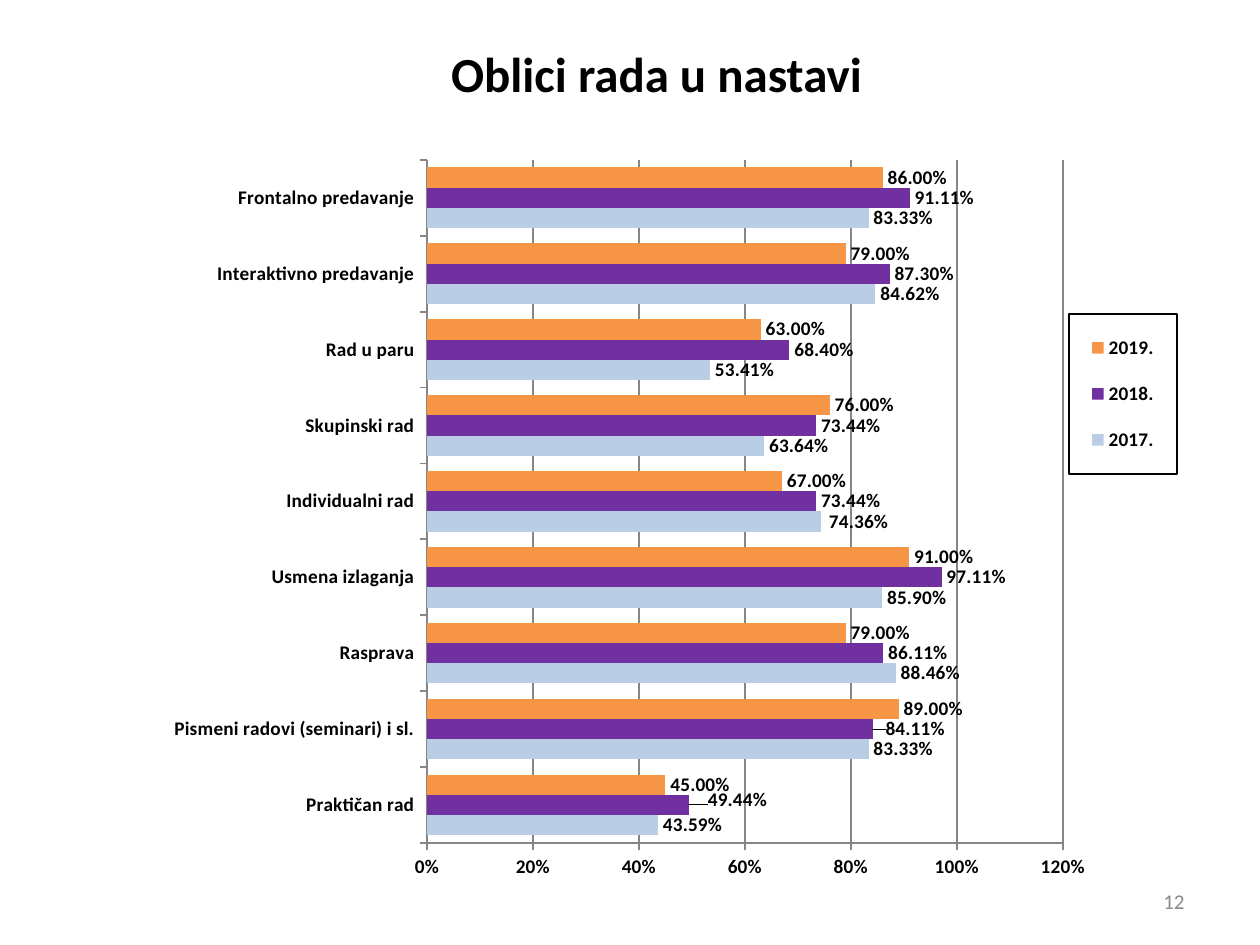
from lxml import etree
from pptx import Presentation
from pptx.chart.data import CategoryChartData
from pptx.dml.color import RGBColor
from pptx.enum.chart import XL_CHART_TYPE, XL_LABEL_POSITION, XL_LEGEND_POSITION, XL_TICK_MARK
from pptx.enum.text import MSO_ANCHOR, PP_ALIGN
from pptx.oxml.ns import qn
from pptx.util import Pt

BAR = XL_CHART_TYPE.BAR_CLUSTERED
OUTSIDE_END = XL_LABEL_POSITION.OUTSIDE_END
RIGHT_LEGEND = XL_LEGEND_POSITION.RIGHT
TICK_OUT = XL_TICK_MARK.OUTSIDE
MIDDLE = MSO_ANCHOR.MIDDLE
CENTER, RIGHT = PP_ALIGN.CENTER, PP_ALIGN.RIGHT

BLACK = RGBColor(0x00, 0x00, 0x00)
WHITE = RGBColor(0xFF, 0xFF, 0xFF)
GRAY = RGBColor(0x89, 0x89, 0x89)
AXIS_GRAY = RGBColor(0x86, 0x86, 0x86)
LIGHT_BLUE = RGBColor(0xB9, 0xCD, 0xE5)
PURPLE = RGBColor(0x70, 0x30, 0xA0)
ORANGE = RGBColor(0xF7, 0x96, 0x46)

FONT = "Calibri"
PERCENT = "0.00%"
WIDTH, HEIGHT = 1260, 945
EMU_PER_PX = 914400 / 126
CHART_LEFT, CHART_TOP, CHART_WIDTH, CHART_HEIGHT = 154, 145, 1037, 750

CATEGORIES = [
    "Praktičan rad", "Pismeni radovi (seminari) i sl.", "Rasprava",
    "Usmena izlaganja", "Individualni rad", "Skupinski rad",
    "Rad u paru", "Interaktivno predavanje", "Frontalno predavanje",
]
SERIES = [
    ("2017.", LIGHT_BLUE,
     [0.4359, 0.8333, 0.8846, 0.859, 0.7436, 0.6364, 0.5341, 0.8462, 0.8333],
     {4: (3, 0)}),
    ("2018.", PURPLE,
     [0.4944, 0.8411, 0.8611, 0.9711, 0.7344, 0.7344, 0.684, 0.873, 0.9111],
     {0: (14, -5), 1: (8, 0)}),
    ("2019.", ORANGE,
     [0.45, 0.89, 0.79, 0.91, 0.67, 0.76, 0.63, 0.79, 0.86],
     {}),
]


def px(*lengths):
    return [round(length * EMU_PER_PX) for length in lengths]


def manual_layout(settings):
    layout = etree.Element(qn("c:layout"))
    manual = etree.SubElement(layout, qn("c:manualLayout"))
    for tag, value in settings:
        etree.SubElement(manual, qn(f"c:{tag}")).set("val", str(value))
    return layout


deck = Presentation()
deck.slide_width, deck.slide_height = px(WIDTH, HEIGHT)
page = deck.slides.add_slide(deck.slide_layouts[5])

title = page.shapes.title
title.left, title.top, title.width, title.height = px(116, 37, 1081, 72)
title.fill.solid()
title.fill.fore_color.rgb = WHITE
number_box = page.shapes.add_textbox(*px(903, 876, 294, 50))

for box, text, size, color, bold, align in [
    (title, "Oblici rada u nastavi", 28, BLACK, True, CENTER),
    (number_box, "12", 12, GRAY, False, RIGHT),
]:
    box.text_frame.word_wrap = True
    box.text_frame.vertical_anchor = MIDDLE
    para = box.text_frame.paragraphs[0]
    para.alignment = align
    span = para.add_run()
    span.text = text
    span.font.name = FONT
    span.font.size = Pt(size)
    span.font.bold = bold
    span.font.color.rgb = color

data = CategoryChartData(number_format=PERCENT)
data.categories = CATEGORIES
for name, color, values, shifts in SERIES:
    data.add_series(name, values)
chart_frame = page.shapes.add_chart(
    BAR, *px(CHART_LEFT, CHART_TOP, CHART_WIDTH, CHART_HEIGHT), data)
chart = chart_frame.chart
chart.has_title = False
chart.font.name = FONT
chart.font.size = Pt(11)
chart.font.bold = True
chart.font.color.rgb = BLACK

plot = chart.plots[0]
plot.gap_width = 75
plot.overlap = 0
plot.vary_by_categories = False

for axis in (chart.category_axis, chart.value_axis):
    axis.major_tick_mark = TICK_OUT
    axis.tick_labels.font.size = Pt(11)
    axis.tick_labels.font.bold = True
    axis.format.line.color.rgb = AXIS_GRAY
    axis.format.line.width = Pt(1)
chart.category_axis.has_major_gridlines = False
value_axis = chart.value_axis
value_axis.minimum_scale = 0
value_axis.maximum_scale = 1.2
value_axis.major_unit = 0.2
value_axis.tick_labels.number_format = "0%"
value_axis.tick_labels.number_format_is_linked = False
value_axis.has_major_gridlines = True
value_axis.major_gridlines.format.line.color.rgb = AXIS_GRAY
value_axis.major_gridlines.format.line.width = Pt(1)

for series, (name, color, values, shifts) in zip(plot.series, SERIES):
    series.format.fill.solid()
    series.format.fill.fore_color.rgb = color
    labels = series.data_labels
    labels.show_value = True
    labels.number_format = PERCENT
    labels.number_format_is_linked = False
    labels.position = OUTSIDE_END
    label_fonts = [labels.font]
    for index, (shift_x, shift_y) in shifts.items():
        label = series.points[index].data_label
        label.position = OUTSIDE_END
        label_fonts.append(label.font)
        index_node = series._element.xpath(f"c:dLbls/c:dLbl/c:idx[@val='{index}']")[0]
        layout = manual_layout([
            ("x", round(shift_x / CHART_WIDTH, 4)),
            ("y", round(shift_y / CHART_HEIGHT, 4)),
        ])
        index_node.addnext(layout)
        number_format = etree.Element(qn("c:numFmt"), formatCode=PERCENT, sourceLinked="0")
        layout.addnext(number_format)
    for font in label_fonts:
        font.name = FONT
        font.size = Pt(11)
        font.bold = True
        font.color.rgb = BLACK

chart.has_legend = True
legend = chart.legend
legend.position = RIGHT_LEGEND
legend.include_in_layout = False
legend.font.size = Pt(11)
legend.font.bold = True

plot_area = chart._chartSpace.chart.plotArea
for parent, target, area in [
    (plot_area, "inner", (427, 160, 636, 683)),
    (legend._element, None, (1069, 314, 108, 160)),
]:
    left, top, width, height = area
    settings = [("layoutTarget", target)] if target else []
    settings += [
        ("xMode", "edge"), ("yMode", "edge"),
        ("x", round((left - CHART_LEFT) / CHART_WIDTH, 4)),
        ("y", round((top - CHART_TOP) / CHART_HEIGHT, 4)),
        ("w", round(width / CHART_WIDTH, 4)),
        ("h", round(height / CHART_HEIGHT, 4)),
    ]
    for existing in parent.findall(qn("c:layout")):
        parent.remove(existing)
    parent.insert(1 if parent is legend._element else 0, manual_layout(settings))

legend_shape = etree.Element(qn("c:spPr"))
legend_line = etree.SubElement(legend_shape, qn("a:ln"), w=str(Pt(0.75)))
line_fill = etree.SubElement(legend_line, qn("a:solidFill"))
etree.SubElement(line_fill, qn("a:srgbClr"), val=str(BLACK))
legend._element.find(qn("c:txPr")).addprevious(legend_shape)

deck.save("out.pptx")
